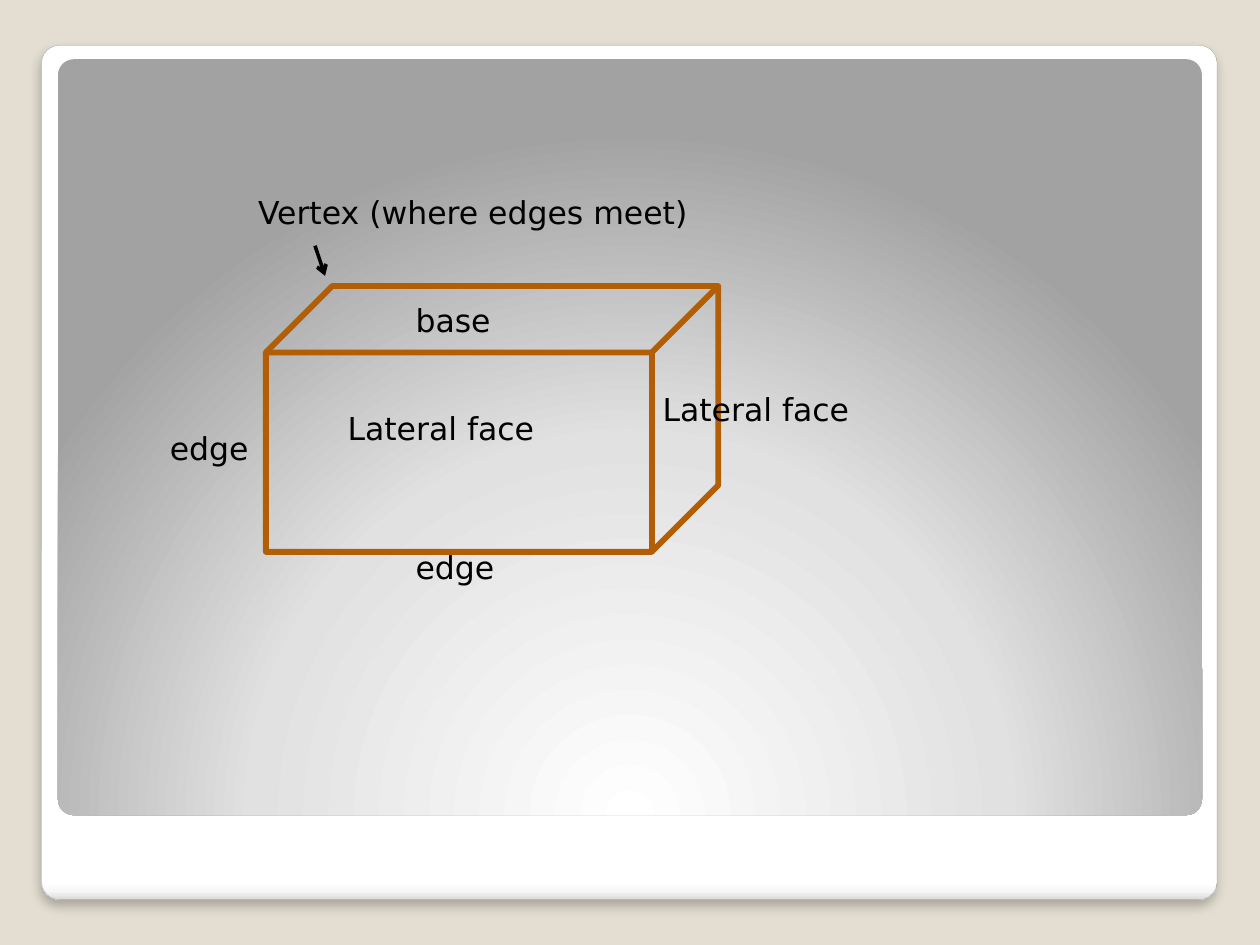
"""Build a slide that names the vertex, edges, base and faces of a box."""
from dataclasses import dataclass

from pptx import Presentation
from pptx.dml.color import RGBColor
from pptx.enum.shapes import MSO_CONNECTOR, MSO_SHAPE
from pptx.enum.text import MSO_AUTO_SIZE
from pptx.oxml import parse_xml
from pptx.oxml.ns import nsdecls, qn
from pptx.shapes.autoshape import Shape
from pptx.slide import Slide
from pptx.util import Pt


@dataclass(frozen=True)
class Theme:
    backdrop: str = "E3DED1"
    frame_edge: str = "A4A4A4"
    box_edge: str = "B25E07"
    ink: str = "000000"
    font: str = "DejaVu Sans"
    label_size: float = 18
    frame_width: float = 0.16
    box_width: float = 3.35
    pointer_width: float = 2


@dataclass(frozen=True)
class Panel:
    left: float
    top: float
    width: float
    height: float
    stops: tuple[tuple[int, str], ...]
    direction: str
    edged: bool = False


@dataclass(frozen=True)
class Label:
    text: str
    left: float
    top: float
    width: float = 140.4
    height: float = 28.8


THEME = Theme()
CORNER = 0.021
LINEAR = '<a:lin ang="5400000" scaled="0"/>'
RADIAL = ('<a:path path="circle"><a:fillToRect l="50000" t="175000" '
          'r="50000" b="-75000"/></a:path>')
PANELS = (
    Panel(23.76, 25.92, 671.76, 488.16,
          ((0, "FFFFFF"), (98, "FFFFFF"), (99, "F7F7F7"), (100, "DADADA")),
          LINEAR, edged=True),
    Panel(33.12, 33.84, 653.76, 432,
          ((0, "FFFFFF"), (55, "E1E1E1"), (100, "A2A2A2")), RADIAL),
)
LABELS = (
    Label("base", 230.4, 168.48),
    Label("edge", 230.4, 309.6),
    Label("Lateral face", 191.52, 230.4),
    Label("Lateral face", 371.52, 219.6),
    Label("Vertex (where edges meet)", 140.4, 106.56, width=331.92),
    Label("edge", 90, 241.92),
)


def rgb(colour: str) -> RGBColor:
    return RGBColor.from_string(colour)


def apply_format(target: object, values: dict[str, object]) -> None:
    for name, value in values.items():
        setattr(target, name, value)


def set_line(line: object, colour: str, width: float) -> None:
    line.color.rgb = rgb(colour)
    line.width = Pt(width)


def add_plain_shape(slide: Slide, kind: MSO_SHAPE, left: float, top: float,
                    width: float, height: float) -> Shape:
    shape = slide.shapes.add_shape(kind, Pt(left), Pt(top), Pt(width), Pt(height))
    shape.shadow.inherit = False
    shape.fill.background()
    return shape


def draw_panel(slide: Slide, panel: Panel) -> None:
    shape = add_plain_shape(slide, MSO_SHAPE.ROUNDED_RECTANGLE, panel.left,
                            panel.top, panel.width, panel.height)
    shape.adjustments[0] = CORNER
    stops = "".join(
        f'<a:gs pos="{position * 1000}"><a:srgbClr val="{colour}"/></a:gs>'
        for position, colour in panel.stops)
    gradient = parse_xml(f'<a:gradFill {nsdecls("a")} rotWithShape="1">'
                         f'<a:gsLst>{stops}</a:gsLst>{panel.direction}</a:gradFill>')
    properties = shape._element.spPr
    properties.replace(properties.find(qn("a:noFill")), gradient)
    if not panel.edged:
        shape.line.fill.background()
        return
    set_line(shape.line, THEME.frame_edge, THEME.frame_width)
    properties.find(qn("a:effectLst")).append(parse_xml(
        f'<a:outerShdw {nsdecls("a")} blurRad="{Pt(6)}" dist="{Pt(4)}" '
        f'dir="5400000" algn="tl" rotWithShape="0"><a:srgbClr val="{THEME.ink}">'
        '<a:alpha val="25000"/></a:srgbClr></a:outerShdw>'))


def draw_box(slide: Slide) -> None:
    box = add_plain_shape(slide, MSO_SHAPE.CUBE, 151.92, 163.44, 258.48, 151.92)
    set_line(box.line, THEME.box_edge, THEME.box_width)


def draw_label(slide: Slide, label: Label) -> None:
    frame = slide.shapes.add_textbox(Pt(label.left), Pt(label.top),
                                     Pt(label.width), Pt(label.height)).text_frame
    apply_format(frame, {"word_wrap": True,
                         "auto_size": MSO_AUTO_SIZE.SHAPE_TO_FIT_TEXT})
    run = frame.paragraphs[0].add_run()
    run.text = label.text
    apply_format(run.font, {"name": THEME.font, "size": Pt(THEME.label_size)})
    run.font.color.rgb = rgb(THEME.ink)


def draw_pointer(slide: Slide) -> None:
    pointer = slide.shapes.add_connector(MSO_CONNECTOR.STRAIGHT, Pt(180), Pt(140.4),
                                         Pt(185.76), Pt(157.68))
    set_line(pointer.line, THEME.ink, THEME.pointer_width)
    properties = pointer._element.spPr
    properties.find(qn("a:ln")).append(
        parse_xml(f'<a:tailEnd {nsdecls("a")} type="arrow"/>'))
    properties.append(parse_xml(f'<a:effectLst {nsdecls("a")}/>'))


def main() -> None:
    deck = Presentation()
    apply_format(deck, {"slide_width": Pt(720), "slide_height": Pt(540)})
    slide = deck.slides.add_slide(deck.slide_layouts[6])
    slide.background.fill.solid()
    slide.background.fill.fore_color.rgb = rgb(THEME.backdrop)
    for panel in PANELS:
        draw_panel(slide, panel)
    draw_box(slide)
    for label in LABELS:
        draw_label(slide, label)
    draw_pointer(slide)
    deck.save("out.pptx")


if __name__ == "__main__":
    main()
